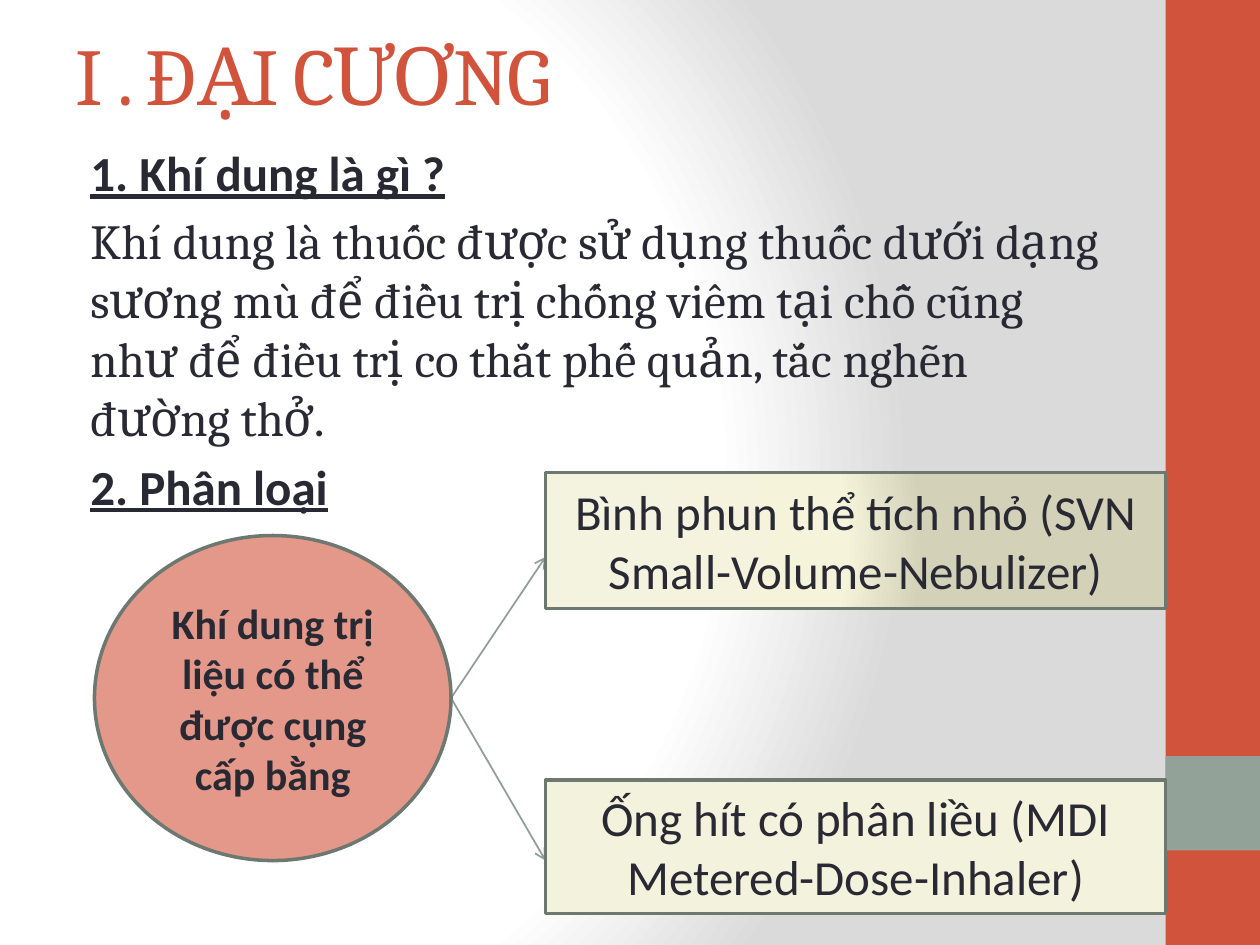
from dataclasses import dataclass
from typing import Optional

from lxml.etree import SubElement
from pptx import Presentation
from pptx.dml.color import RGBColor
from pptx.enum.shapes import MSO_CONNECTOR as CONN, MSO_SHAPE as SHAPE
from pptx.enum.text import MSO_ANCHOR as ANCHOR, PP_ALIGN as ALIGN
from pptx.oxml.ns import qn
from pptx.util import Inches, Pt

RED = RGBColor(0xD2, 0x53, 0x3C)
SAGE = RGBColor(0x93, 0xA2, 0x99)
INK = RGBColor(0x29, 0x29, 0x34)
SALMON = RGBColor(0xE4, 0x98, 0x8A)
CREAM = RGBColor(0xF3, 0xF2, 0xDC)
BORDER = RGBColor(0x6D, 0x78, 0x71)
ARROW = RGBColor(0x8F, 0x9F, 0x96)

PAGE_GRADIENT = ((0, "FFFFFF"), (75, "FFFFFF"), (100, "DADADA"))
BOX_GRADIENT = ((0, "F4F3E0"), (75, "F5F4DA"), (100, "D3D2B9"))
FOCUS = {"l": 20, "t": 50, "r": 100, "b": 50}

HEADING = {"name": "Calibri", "size": Pt(28), "bold": True, "underline": True}
PROSE = {"name": "Cambria", "size": Pt(28)}
LABEL = {"name": "Calibri", "size": Pt(28)}
BOLD_LABEL = {"name": "Calibri", "size": Pt(24), "bold": True}
TITLE = {"name": "Cambria", "size": Pt(46)}

BODY = (
    (("1. Khí dung là gì ?", HEADING),),
    (("Khí dung là thuốc được sử dụng thuốc dưới dạng sương mù để điều trị "
      "chống viêm tại chỗ cũng như để điều trị co thắt phế quản, tắc nghẽn "
      "đường thở", PROSE), (".", LABEL)),
    (("2. Phân loại", HEADING),),
)


@dataclass
class Block:
    left: float
    top: float
    width: float
    height: float
    fill: RGBColor
    kind: int = SHAPE.RECTANGLE
    text: str = ""
    font: Optional[dict] = None
    gradient: Optional[tuple] = None

    def box(self) -> list:
        return [Inches(v) for v in (self.left, self.top, self.width, self.height)]


@dataclass
class Arrow:
    x1: float
    y1: float
    x2: float
    y2: float


SIDEBAR = (Block(9.25, 0, 0.75, 7.5, RED), Block(9.25, 6, 0.75, 0.75, SAGE))
ARROWS = tuple(Arrow(3.58, 5.54, 4.33, y) for y in (4.42, 6.83))
DIAGRAM = (
    Block(0.75, 4.25, 2.83, 2.58, SALMON, SHAPE.OVAL,
          "Khí dung trị liệu có thể được cụng cấp bằng", BOLD_LABEL),
    Block(4.33, 3.75, 4.92, 1.08, CREAM, SHAPE.RECTANGLE,
          "Bình phun thể tích nhỏ (SVN Small-Volume-Nebulizer)", LABEL, BOX_GRADIENT),
    Block(4.33, 6.19, 4.92, 1.06, CREAM, SHAPE.RECTANGLE,
          "Ống hít có phân liều (MDI Metered-Dose-Inhaler)", LABEL),
)


def set_radial(owner, fill, stops: tuple) -> None:
    fill.gradient()
    grad = owner.find(".//" + qn("a:gradFill"))
    for child in list(grad):
        grad.remove(child)
    gs_lst = SubElement(grad, qn("a:gsLst"))
    for pos, color in stops:
        gs = SubElement(gs_lst, qn("a:gs"), pos=str(pos * 1000))
        SubElement(gs, qn("a:srgbClr"), val=color)
    circle = SubElement(grad, qn("a:path"), path="circle")
    SubElement(circle, qn("a:fillToRect"),
               {side: str(v * 1000) for side, v in FOCUS.items()})


def add_run(p, text: str, font: dict, color: RGBColor = INK):
    r = p.add_run()
    r.text = text
    for name, value in font.items():
        setattr(r.font, name, value)
    r.font.color.rgb = color
    return r


def add_block(slide, block: Block) -> None:
    sp = slide.shapes.add_shape(block.kind, *block.box())
    sp.shadow.inherit = False
    if block.gradient:
        set_radial(sp.element, sp.fill, block.gradient)
    else:
        sp.fill.solid()
        sp.fill.fore_color.rgb = block.fill
    if not block.text:
        sp.line.fill.background()
        return
    sp.line.color.rgb = BORDER
    sp.line.width = Pt(2)
    tf = sp.text_frame
    tf.word_wrap = True
    tf.vertical_anchor = ANCHOR.MIDDLE
    p = tf.paragraphs[0]
    p.alignment = ALIGN.CENTER
    add_run(p, block.text, block.font)


def add_arrow(slide, arrow: Arrow) -> None:
    ends = [Inches(v) for v in (arrow.x1, arrow.y1, arrow.x2, arrow.y2)]
    cx = slide.shapes.add_connector(CONN.STRAIGHT, *ends)
    cx.line.color.rgb = ARROW
    cx.line.width = Pt(1)
    SubElement(cx.line._get_or_add_ln(), qn("a:tailEnd"), type="arrow")
    SubElement(cx.element.spPr, qn("a:effectLst"))


def add_text_frame(slide, top: float, height: float, anchor):
    tb = slide.shapes.add_textbox(Inches(0.5), Inches(top), Inches(8.33), Inches(height))
    tf = tb.text_frame
    tf.word_wrap = True
    tf.vertical_anchor = anchor
    return tf


def add_title(slide) -> None:
    tf = add_text_frame(slide, 0.17, 0.83, ANCHOR.MIDDLE)
    r = add_run(tf.paragraphs[0], "I . ĐẠI CƯƠNG", TITLE, RED)
    r.font._element.set("spc", "-100")


def add_body(slide) -> None:
    tf = add_text_frame(slide, 1.08, 5.92, ANCHOR.TOP)
    for i, runs in enumerate(BODY):
        p = tf.add_paragraph() if i else tf.paragraphs[0]
        p.space_before = Pt(5.6)
        p._p.get_or_add_pPr().set("marL", str(Inches(0.12)))
        for text, font in runs:
            add_run(p, text, font)


def main() -> None:
    prs = Presentation()
    prs.slide_width, prs.slide_height = Inches(10), Inches(7.5)
    slide = prs.slides.add_slide(prs.slide_layouts[6])
    set_radial(slide.element, slide.background.fill, PAGE_GRADIENT)
    for block in SIDEBAR:
        add_block(slide, block)
    add_title(slide)
    add_body(slide)
    for arrow in ARROWS:
        add_arrow(slide, arrow)
    for block in DIAGRAM:
        add_block(slide, block)
    prs.save("out.pptx")


if __name__ == "__main__":
    main()
